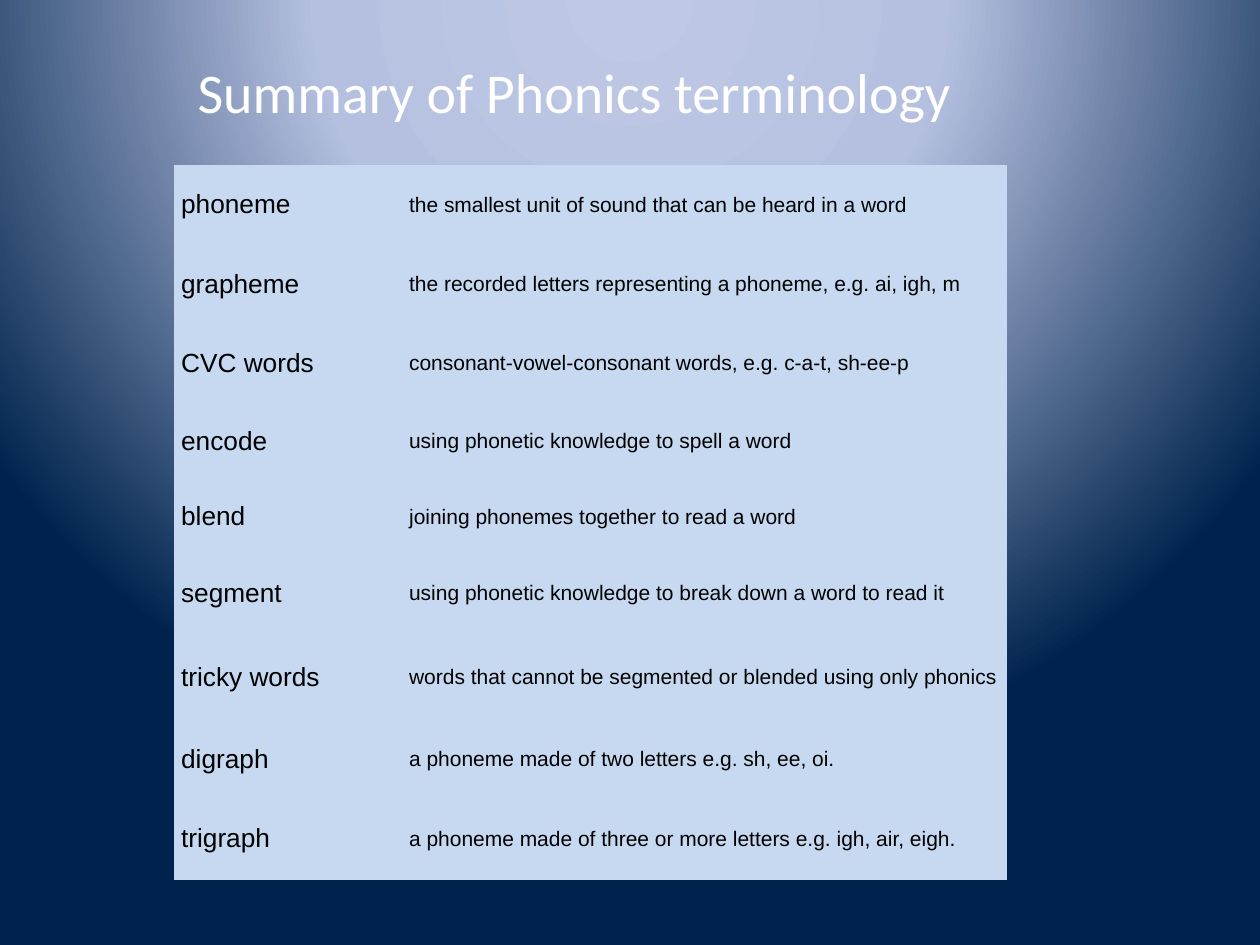
from lxml import etree
from pptx import Presentation
from pptx.dml.color import RGBColor
from pptx.enum.text import MSO_ANCHOR, MSO_AUTO_SIZE
from pptx.util import Pt

TITLE = "Summary of Phonics terminology"
# term, meaning, row height
TERMS = [
    ("phoneme", "the smallest unit of sound that can be heard in a word", 45.4),
    ("grapheme", "the recorded letters representing a phoneme, e.g. ai, igh, m", 45.4),
    ("CVC words", "consonant-vowel-consonant words, e.g. c-a-t, sh-ee-p", 45.4),
    ("encode", "using phonetic knowledge to spell a word", 43.2),
    ("blend", "joining phonemes together to read a word", 43.2),
    ("segment", "using phonetic knowledge to break down a word to read it", 44.6),
    ("tricky words", "words that cannot be segmented or blended using only phonics", 51),
    ("digraph", "a phoneme made of two letters e.g. sh, ee, oi.", 43.2),
    ("trigraph", "a phoneme made of three or more letters e.g. igh, air, eigh.", 47.4),
]
COLS = [130.3, 345.6]
SIZES = [15, 12]
LEFT, TOP = 99.4, 94.3

WHITE = RGBColor(0xFF, 0xFF, 0xFF)
BLACK = RGBColor(0, 0, 0)
PALE = RGBColor(0xC6, 0xD9, 0xF1)
GLOW = [
    (0, RGBColor(0xBF, 0xC9, 0xE5)),
    (40, RGBColor(0xB5, 0xC0, 0xE0)),
    (100, RGBColor(0x00, 0x23, 0x4D)),
]
NS = "http://schemas.openxmlformats.org/drawingml/2006/main"
PLAIN = "{2D5ABB26-0587-4C30-8999-92F81FD0307C}"  # no style, no grid


def add_run(frame, text, size, font, color):
    run = frame.paragraphs[0].add_run()
    run.text = text
    run.font.size = Pt(size)
    run.font.name = font
    run.font.color.rgb = color


def set_glow(slide):
    slide.background.fill.solid()
    old = slide.element.xpath("p:cSld/p:bg/p:bgPr/a:solidFill")[0]
    stops = "".join(
        f'<a:gs pos="{pos * 1000}"><a:srgbClr val="{color}"/></a:gs>'
        for pos, color in GLOW
    )
    grad = etree.fromstring(
        f'<a:gradFill xmlns:a="{NS}" rotWithShape="1"><a:gsLst>{stops}</a:gsLst>'
        '<a:path path="circle"><a:fillToRect l="50000" t="-80000" r="50000" '
        'b="180000"/></a:path></a:gradFill>'
    )
    old.getparent().replace(old, grad)


def add_terms(slide):
    frame = slide.shapes.add_table(
        len(TERMS), len(COLS), Pt(LEFT), Pt(TOP),
        Pt(sum(COLS)), Pt(sum(row[2] for row in TERMS)),
    )
    table = frame.table
    table.first_row = table.horz_banding = False
    frame.element.xpath(".//a:tableStyleId")[0].text = PLAIN
    for col, width in zip(table.columns, COLS):
        col.width = Pt(width)
    for row, (*texts, height) in zip(table.rows, TERMS):
        row.height = Pt(height)
        for cell, text, size in zip(row.cells, texts, SIZES):
            cell.fill.solid()
            cell.fill.fore_color.rgb = PALE
            cell.vertical_anchor = MSO_ANCHOR.MIDDLE
            cell.margin_left = cell.margin_right = Pt(4.1)
            cell.margin_top = cell.margin_bottom = Pt(2)
            add_run(cell.text_frame, text, size, "Arial", BLACK)


def add_title(slide):
    box = slide.shapes.add_textbox(Pt(105.8), Pt(29.5), Pt(493.2), Pt(46))
    frame = box.text_frame
    frame.word_wrap = True
    frame.auto_size = MSO_AUTO_SIZE.SHAPE_TO_FIT_TEXT
    add_run(frame, TITLE, 32, "Calibri", WHITE)


def main():
    deck = Presentation()
    deck.slide_width, deck.slide_height = Pt(720), Pt(540)
    slide = deck.slides.add_slide(deck.slide_layouts[6])
    set_glow(slide)
    add_terms(slide)
    add_title(slide)
    deck.save("out.pptx")


if __name__ == "__main__":
    main()
